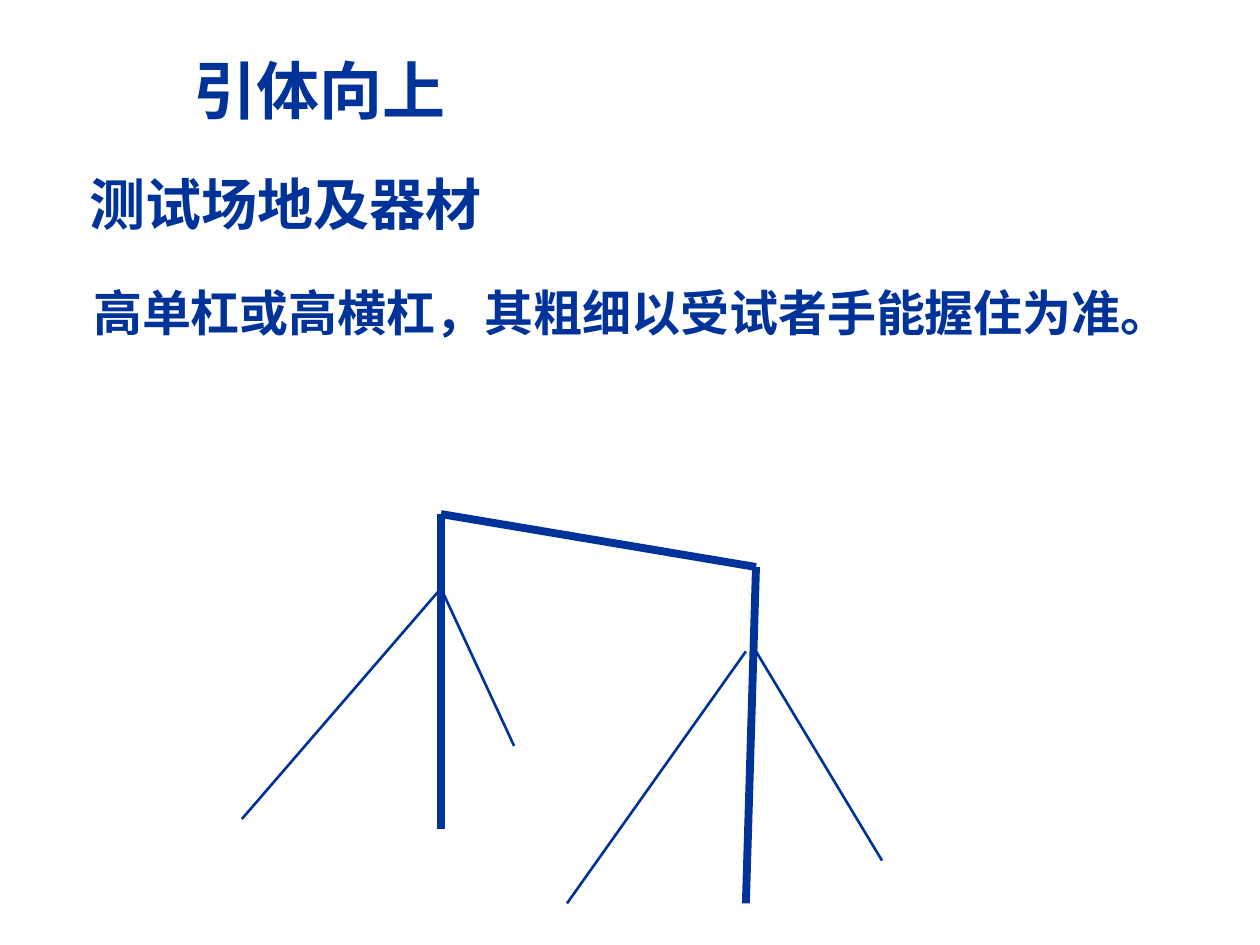
from dataclasses import dataclass
from typing import NamedTuple

from pptx import Presentation
from pptx import util as u
from pptx.dml import color as c
from pptx.enum import shapes, text
from pptx.oxml import ns
from lxml import etree

PX = 9144


@dataclass(frozen=True)
class Theme:
    ink: c.RGBColor = c.RGBColor.from_string("003399")
    paper: c.RGBColor = c.RGBColor.from_string("FFFFFF")
    font: str = "Noto Sans CJK SC"
    title: int = 36
    head: int = 32
    body: int = 28
    bar: float = 4.5
    stay: float = 1.5


class Box(NamedTuple):
    left: int
    top: int
    width: int
    height: int


class Point(NamedTuple):
    x: int
    y: int


class Pole(NamedTuple):
    start: Point
    end: Point
    width: float


THEME = Theme()


def place(shape, box: Box) -> None:
    shape.left, shape.top, shape.width, shape.height = (n * PX for n in box)


def write(shape, words: str, size: int, wrap: bool) -> None:
    frame = shape.text_frame
    frame.word_wrap = wrap
    frame.auto_size = text.MSO_AUTO_SIZE.NONE
    frame.vertical_anchor = text.MSO_ANCHOR.MIDDLE
    para = frame.paragraphs[0]
    para.alignment = text.PP_ALIGN.CENTER
    run = para.add_run()
    run.text = words
    run.font.size = u.Pt(size)
    run.font.bold = True
    run.font.color.rgb = THEME.ink
    run.font.name = THEME.font
    east = etree.SubElement(run.font._element, ns.qn("a:ea"))
    east.set("typeface", THEME.font)


def label(slide, words: str, box: Box, size: int) -> None:
    shape = slide.shapes.add_textbox(0, 0, 0, 0)
    place(shape, box)
    write(shape, words, size, False)


def draw(slide, pole: Pole) -> None:
    ends = (n * PX for n in (*pole.start, *pole.end))
    line = slide.shapes.add_connector(shapes.MSO_CONNECTOR.STRAIGHT, *ends)
    line.line.color.rgb = THEME.ink
    line.line.width = u.Pt(pole.width)
    etree.SubElement(line._element.spPr, ns.qn("a:effectLst"))


def main() -> None:
    deck = Presentation()
    deck.slide_width, deck.slide_height = 1000 * PX, 750 * PX
    slide = deck.slides.add_slide(deck.slide_layouts[5])
    slide.background.fill.solid()
    slide.background.fill.fore_color.rgb = THEME.paper

    title = slide.shapes.title
    place(title, Box(117, 36, 273, 70))
    write(title, "引体向上", THEME.title, True)
    label(slide, "测试场地及器材", Box(61, 130, 332, 63), THEME.head)
    label(slide, "高单杠或高横杠，其粗细以受试者手能握住为准。 ",
          Box(61, 219, 889, 57), THEME.body)

    left, right = Point(350, 408), Point(600, 450)
    joint = Point(350, 467)
    poles = [
        Pole(left, right, THEME.bar),
        Pole(left, Point(350, 658), THEME.bar),
        Pole(right, Point(592, 717), THEME.bar),
        Pole(joint, Point(192, 650), THEME.stay),
        Pole(joint, Point(408, 592), THEME.stay),
        Pole(Point(592, 517), Point(450, 717), THEME.stay),
        Pole(Point(600, 517), Point(700, 683), THEME.stay),
    ]
    for pole in poles:
        draw(slide, pole)
    deck.save("out.pptx")


if __name__ == "__main__":
    main()
